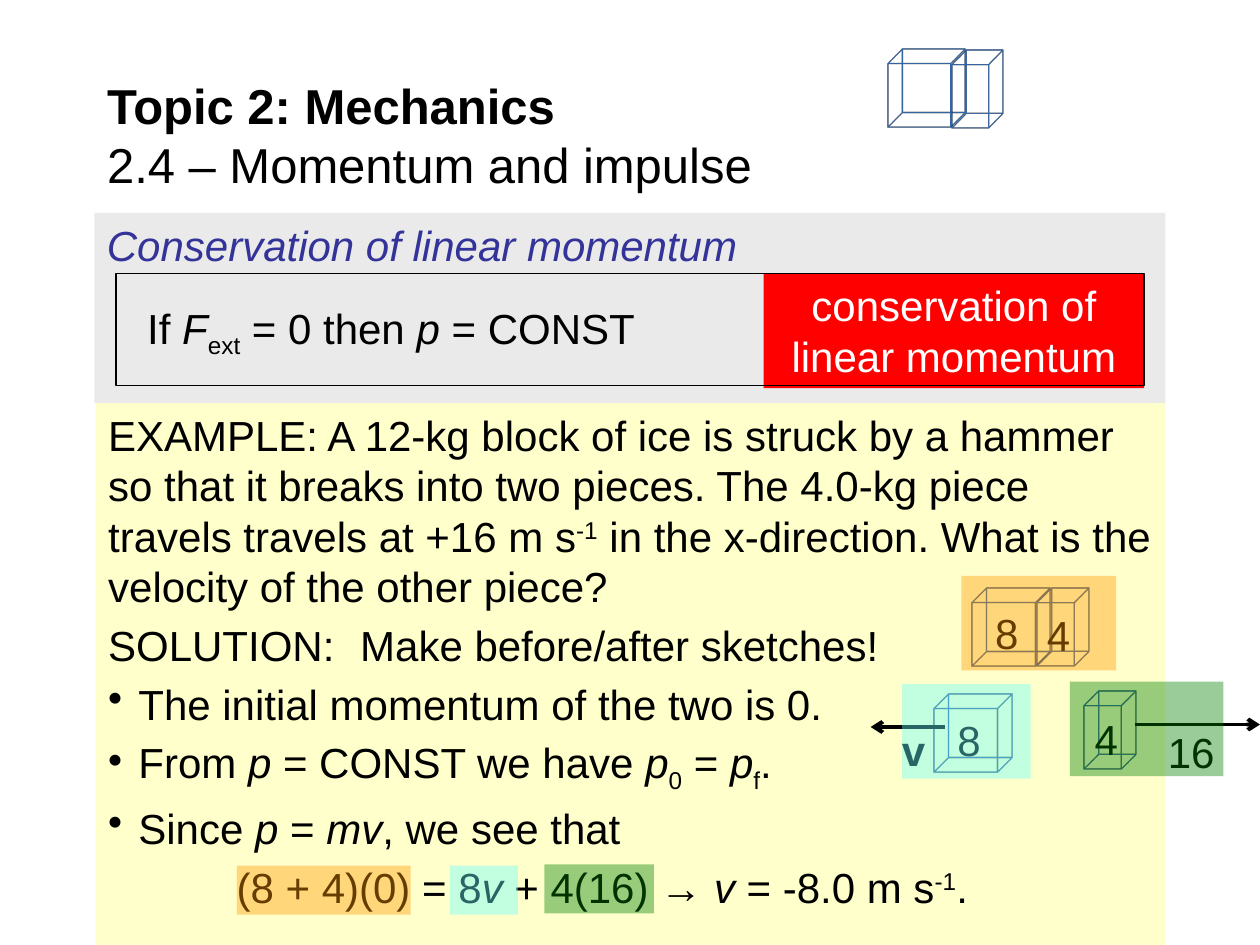
from lxml.etree import fromstring
from pptx import Presentation
from pptx.dml.color import RGBColor
from pptx.enum.shapes import MSO_CONNECTOR, MSO_SHAPE
from pptx.enum.text import MSO_ANCHOR, MSO_AUTO_SIZE, PP_ALIGN
from pptx.oxml.ns import qn
from pptx.oxml.xmlchemy import OxmlElement
from pptx.util import Inches, Pt

COLOURS = {
    "black": "000000", "white": "FFFFFF", "grey": "EAEAEA", "red": "FF0000",
    "cream": "FFFFCC", "navy": "333399", "ice": "BBE0E3",
    "orange": "FF9900", "cyan": "66FFFF", "green": "008000",
}
ITALIC, SUB, SUPER = {"italic": True}, {"baseline": -25000}, {"baseline": 30000}
DRAWING = "http://schemas.openxmlformats.org/drawingml/2006/main"
WIREFRAME = (
    f'<a:scene3d xmlns:a="{DRAWING}"><a:camera prst="legacyObliqueTopRight"/>'
    '<a:lightRig rig="legacyFlat3" dir="b"/></a:scene3d>',
    f'<a:sp3d xmlns:a="{DRAWING}" extrusionH="303200" prstMaterial="legacyWireframe">'
    '<a:bevelT w="13500" h="13500" prst="angle"/><a:bevelB w="13500" h="13500" prst="angle"/>'
    f'<a:extrusionClr><a:srgbClr val="{COLOURS["ice"]}"/></a:extrusionClr></a:sp3d>',
)


def colour(name):
    return RGBColor.from_string(COLOURS[name])


def cells(*counts):
    """Lengths on a grid of 100 columns by 75 rows, each a tenth of an inch."""
    return [Inches(count / 10) for count in counts]


class Board:
    """The style of the lesson and the slide being built."""

    def __init__(self):
        self.deck = Presentation()
        self.deck.slide_width, self.deck.slide_height = cells(100, 75)
        self.page = self.deck.slides.add_slide(self.deck.slide_layouts[0])
        self.target = self.page.shapes

    def group(self):
        self.target = self.page.shapes.add_group_shape().shapes

    def ungroup(self):
        self.target = self.page.shapes

    def set_text(self, shape, paragraphs, size=24, ink="black", anchor=MSO_ANCHOR.TOP, wrap=True):
        """Each paragraph is (format dict, spans); a span is text or (text, format dict)."""
        frame = shape.text_frame
        settings = {"word_wrap": wrap, "auto_size": MSO_AUTO_SIZE.NONE, "vertical_anchor": anchor}
        for name, value in settings.items():
            setattr(frame, name, value)
        for number, (layout, spans) in enumerate(paragraphs):
            para = frame.add_paragraph() if number else frame.paragraphs[0]
            settings = {"alignment": PP_ALIGN.LEFT, "space_before": Pt(4.8 if number else 0)}
            settings.update(layout)
            margin, bullet = settings.pop("margin", 0), settings.pop("bullet", None)
            for name, value in settings.items():
                setattr(para, name, value)
            properties = para._p.get_or_add_pPr()
            properties.set("marL", str(Inches(margin)))
            properties.set("indent", str(Inches(-margin if bullet else 0)))
            if bullet:
                mark = OxmlElement("a:buChar")
                mark.set("char", bullet)
                properties.append(mark)
            for span in spans:
                text, changes = (span, {}) if isinstance(span, str) else span
                if text == "\n":
                    para.add_line_break()
                    continue
                run = para.add_run()
                run.text = text
                values = {"name": "Arial", "size": Pt(size), "bold": False, "italic": False, **changes}
                baseline = values.pop("baseline", None)
                for name, value in values.items():
                    setattr(run.font, name, value)
                run.font.color.rgb = colour(ink)
                if baseline:
                    run._r.get_or_add_rPr().set("baseline", str(baseline))

    def title(self, place, spans):
        heading = self.page.shapes.title
        heading.left, heading.top, heading.width, heading.height = cells(*place)
        self.set_text(heading, [({}, spans)], size=28, anchor=MSO_ANCHOR.MIDDLE)
        subtitle = self.page.placeholders[1]._element
        subtitle.getparent().remove(subtitle)

    def rectangle(self, place, fill=None, line=None, share=None):
        shape = self.target.add_shape(MSO_SHAPE.RECTANGLE, *cells(*place))
        shape.shadow.inherit = False
        if fill:
            shape.fill.solid()
            shape.fill.fore_color.rgb = colour(fill)
        else:
            shape.fill.background()
        if line:
            shape.line.color.rgb = colour(line)
            shape.line.width = Pt(1)
        else:
            shape.line.fill.background()
        if share:
            alpha = OxmlElement("a:alpha")
            alpha.set("val", str(share * 1000))
            shape._element.spPr.find(".//" + qn("a:srgbClr")).append(alpha)
        return shape

    def block(self, left, top, width):
        """A wire-frame block of ice."""
        shape = self.rectangle((left, top, width, 5.1), "ice")
        for part in WIREFRAME:
            shape._element.spPr.append(fromstring(part))

    def label(self, place, spans, **style):
        box = self.target.add_textbox(*cells(*place))
        self.set_text(box, [({}, spans)], **style)

    def arrow(self, start, end, row):
        line = self.target.add_connector(MSO_CONNECTOR.STRAIGHT, *cells(start, row, end, row))
        line.line.color.rgb = colour("black")
        line.line.width = Pt(2.25)
        tip = OxmlElement("a:tailEnd")
        tip.set("type", "arrow")
        line.line._get_or_add_ln().append(tip)
        line._element.spPr.append(OxmlElement("a:effectLst"))


def main():
    board = Board()
    board.title((7.5, 5.8, 85, 9.8), [("Topic 2: Mechanics", {"bold": True}), "\n",
                                      "2.4 – Momentum and impulse"])

    # Law of conservation
    panel = board.rectangle((7.5, 16.9, 85, 15.1), "grey")
    board.set_text(panel, [({}, [("Conservation of linear momentum", ITALIC)])], ink="navy")
    board.group()
    board.label((10.7, 22.4, 46, 7.7), ["If ", ("F", ITALIC), ("ext", SUB), " = 0 then ",
                                        ("p", ITALIC), " = CONST"], anchor=MSO_ANCHOR.MIDDLE)
    name = board.rectangle((60.6, 21.7, 30.2, 9.1), "red")
    board.set_text(name, [({"alignment": PP_ALIGN.CENTER}, ["conservation of linear momentum"])],
                   ink="white")
    board.rectangle((9.2, 21.7, 81.6, 8.9), line="black")
    board.ungroup()

    # Worked example
    bullet = {"bullet": "•", "margin": 0.24}
    example = board.rectangle((7.6, 32, 84.9, 43), "cream")
    board.set_text(example, [
        ({}, ["EXAMPLE: A 12-kg block of ice is struck by a hammer so that it breaks into two "
              "pieces. The 4.0-kg piece travels travels at +16 m s", ("-1", SUPER),
              " in the x-direction. What is the velocity of the other piece?"]),
        ({}, ["SOLUTION: \tMake before/after sketches!"]),
        (bullet, ["The initial momentum of the two is 0."]),
        (bullet, ["From ", ("p", ITALIC), " = CONST we have", (" p", ITALIC), ("0", SUB), " = ",
                  ("p", ITALIC), ("f", SUB), "."]),
        (bullet, ["Since ", ("p", ITALIC), " = ", ("mv", ITALIC), ", we see that"]),
        ({"margin": 1.02}, ["(8 + 4)(0) = 8", ("v", ITALIC), " + 4(16) → ", ("v", ITALIC),
                            " = -8.0 m s", ("-1", SUPER), "."]),
    ])

    # Whole block beside the title
    board.block(70.4, 5, 5.1)
    board.block(75.5, 5.1, 3)

    # Before and after sketches: block place, mass and label place
    for left, top, width, mass, label_left, label_top in [
        (77.1, 47.8, 5.1, "8", 78, 47.7), (82.3, 47.8, 3, "4", 82.1, 47.9),
        (74.1, 56.2, 5.1, "8", 75, 56.2), (86, 56, 3, "4", 85.9, 56.1),
    ]:
        board.group()
        board.block(left, top, width)
        board.label((label_left, label_top, 4, 5), [mass])

    # Velocities
    board.group()
    board.arrow(90.1, 100, 57.5)
    board.label((91.7, 57.2, 5.8, 5), ["16"])
    board.group()
    board.arrow(75, 69.1, 57.7)
    board.label((70.6, 57, 3.9, 5), [("v", {"bold": True})], wrap=False)
    board.ungroup()

    # Matching highlights on sketches and equation
    for fill, sketch, term in [
        ("orange", (76.3, 45.7, 12.3, 7.5), (18.8, 68.7, 13.8, 3.9)),
        ("cyan", (71.6, 54.3, 10.2, 7.5), (35.7, 68.7, 5.4, 3.9)),
        ("green", (84.9, 54.1, 12.2, 7.5), (43.2, 68.6, 8.7, 3.9)),
    ]:
        for place in (sketch, term):
            board.rectangle(place, fill, share=40)

    board.deck.save("out.pptx")


if __name__ == "__main__":
    main()
